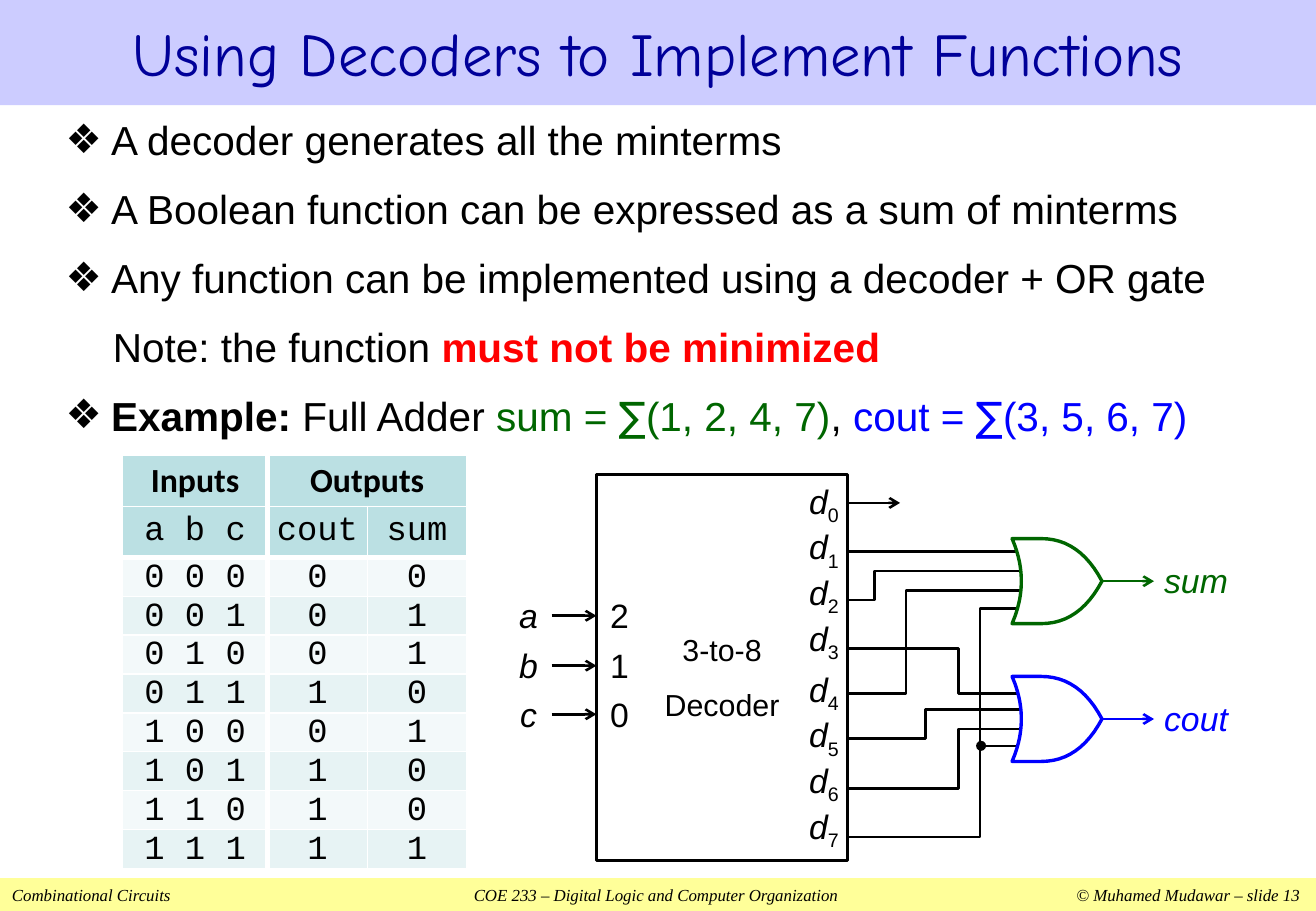
"""Build the slide on implementing functions with decoders."""
from itertools import product

from lxml import etree
from pptx import Presentation
from pptx.dml.color import RGBColor
from pptx.enum.shapes import MSO_CONNECTOR, MSO_SHAPE
from pptx.enum.text import MSO_ANCHOR, MSO_AUTO_SIZE, PP_ALIGN
from pptx.oxml.ns import qn
from pptx.util import Pt

STRAIGHT = MSO_CONNECTOR.STRAIGHT
RECTANGLE = MSO_SHAPE.RECTANGLE
MIDDLE = MSO_ANCHOR.MIDDLE
NO_FIT = MSO_AUTO_SIZE.NONE
CENTER, LEFT = PP_ALIGN.CENTER, PP_ALIGN.LEFT

HEX = {
    "black": "000000", "white": "FFFFFF", "red": "FF0000",
    "green": "006600", "blue": "0000FF", "navy": "000099",
    "lavender": "CCCCFF", "yellow": "FFFF99",
    "header": "BBE0E3", "pale": "F3F9FA", "tint": "E7F3F4",
}
COLOR = {name: RGBColor.from_string(value) for name, value in HEX.items()}


def style(run, size, color="black", font="Arial", bold=False, italic=False):
    run.font.size = Pt(size)
    run.font.name = font
    run.font.bold = bold
    run.font.italic = italic
    run.font.color.rgb = COLOR[color]


def add_label(text, left, top, width=27.4, color="black", italic=True, align=CENTER, subscript=""):
    label = slide.shapes.add_textbox(Pt(left), Pt(top), Pt(width), Pt(28))
    frame = label.text_frame
    frame.margin_left = frame.margin_right = frame.margin_top = frame.margin_bottom = 0
    frame.word_wrap = False
    frame.vertical_anchor = MIDDLE
    frame.text = text
    paragraph = frame.paragraphs[0]
    paragraph.alignment = align
    style(paragraph.runs[0], 20, color, italic=italic)
    if subscript:
        index = paragraph.add_run()
        index.text = subscript
        style(index, 20, color)
        index.font._element.set("baseline", "-25000")


prs = Presentation()
prs.slide_width, prs.slide_height = Pt(780), Pt(540)
slide = prs.slides.add_slide(prs.slide_layouts[1])

footer = slide.shapes.add_shape(RECTANGLE, 0, Pt(520.5), Pt(780), Pt(19.5))
footer.shadow.inherit = False
footer.fill.solid()
footer.fill.fore_color.rgb = COLOR["yellow"]
footer.line.fill.background()
footer.text_frame.vertical_anchor = MIDDLE
footer.text_frame.text = (
    "Combinational Circuits\tCOE 233 – Digital Logic and Computer Organization"
    "\t© Muhamed Mudawar – slide 13"
)
credits = footer.text_frame.paragraphs[0]
credits.alignment = LEFT
style(credits.runs[0], 10, font="Times New Roman", italic=True)
tabs = etree.SubElement(credits._p.get_or_add_pPr(), qn("a:tabLst"))
for position, kind in ((381.6, "ctr"), (763.2, "r")):
    etree.SubElement(tabs, qn("a:tab"), pos=str(Pt(position)), algn=kind)

title = slide.shapes.title
title.left, title.top, title.width, title.height = 0, 0, Pt(780), Pt(62.4)
title.fill.solid()
title.fill.fore_color.rgb = COLOR["lavender"]
title.text_frame.auto_size = NO_FIT
title.text_frame.vertical_anchor = MIDDLE
title.text_frame.text = "Using Decoders to Implement Functions"
title.text_frame.paragraphs[0].alignment = CENTER
style(title.text_frame.paragraphs[0].runs[0], 36, "navy", "Comic Neue")

points = [
    [("A decoder generates all the minterms",)],
    [("A Boolean function can be expressed as a sum of minterms",)],
    [("Any function can be implemented using a decoder + OR gate",)],
    [("Note: the function ",), ("must not be minimized", "red", "Arial", True)],
    [("Example:", "black", "Arial", True), (" Full Adder ",),
     ("sum = ", "green"), ("∑", "green", "DejaVu Sans"), ("(1, 2, 4, 7)", "green"), (", ",),
     ("cout = ", "blue"), ("∑", "blue", "DejaVu Sans"), ("(3, 5, 6, 7)", "blue")],
]
body = slide.placeholders[1]
body.left, body.top, body.width, body.height = Pt(31.7), Pt(64.8), Pt(730), Pt(203.8)
body.text_frame.auto_size = NO_FIT
for number, pieces in enumerate(points):
    point = body.text_frame.paragraphs[0] if number == 0 else body.text_frame.add_paragraph()
    point.space_before = Pt(12)
    for text, *look in pieces:
        run = point.add_run()
        run.text = text
        style(run, 24, *look)
    is_note = pieces[0][0].startswith("Note")
    properties = point._p.get_or_add_pPr()
    properties.set("marL", str(Pt(28 if is_note else 27)))
    properties.set("indent", str(Pt(0 if is_note else -27)))
    if is_note:
        etree.SubElement(properties, qn("a:buNone"))
    else:
        etree.SubElement(properties, qn("a:buChar"), char="❖")

rows = [["Inputs", "Outputs", ""], ["a b c", "cout", "sum"]]
for bits in product((0, 1), repeat=3):
    carry, total = divmod(sum(bits), 2)
    rows.append([" ".join(map(str, bits)), str(carry), str(total)])
truth_table = slide.shapes.add_table(10, 3, Pt(72.7), Pt(270), Pt(204), Pt(244.8)).table
for column, width in zip(truth_table.columns, (86, 59, 59)):
    column.width = Pt(width)
truth_table.cell(0, 1).merge(truth_table.cell(0, 2))
for r, texts in enumerate(rows):
    truth_table.rows[r].height = Pt(30.2 if r < 2 else 23.05)
    for c, text in enumerate(texts):
        cell = truth_table.cell(r, c)
        cell.margin_left = cell.margin_right = cell.margin_top = cell.margin_bottom = 0
        cell.vertical_anchor = MIDDLE
        for side, thick in (("L", c == 1), ("R", c == 0), ("T", r == 2), ("B", r == 1)):
            border = etree.SubElement(cell._tc.get_or_add_tcPr(), qn(f"a:ln{side}"),
                                      w=str(Pt(3 if thick else 1)))
            paint = etree.SubElement(border, qn("a:solidFill"))
            etree.SubElement(paint, qn("a:srgbClr"), val=HEX["white"])
        cell.fill.solid()
        cell.fill.fore_color.rgb = COLOR["header" if r < 2 else ("pale", "tint")[r % 2]]
        if text:
            cell.text_frame.text = text
            value = cell.text_frame.paragraphs[0]
            value.alignment = CENTER
            value.line_spacing = 1.0 if r < 2 else 0.9
            style(value.runs[0], 20, font="Courier New" if r else "Calibri", bold=r == 0)

wires = [(467.3, 568.1, 432), (437.8, 548.6, 420.5), (384.5, 568.1, 411.1),
         (496.1, 581, 360.7), (411.1, 537.1, 349.9), (355.7, 518.4, 338.4)]
for start, bend, end in wires:
    builder = slide.shapes.build_freeform(Pt(502), Pt(start))
    builder.add_line_segments(
        [(Pt(x), Pt(y)) for x, y in ((bend, start), (bend, end), (606, end))], close=False)
    wire = builder.convert_to_shape()
    wire.shadow.inherit = False
    wire.fill.background()
    wire.line.color.rgb = COLOR["black"]
    wire.line.width = Pt(1.5)

decoder = slide.shapes.add_shape(RECTANGLE, Pt(353.5), Pt(281.2), Pt(149), Pt(229))
decoder.shadow.inherit = False
decoder.fill.solid()
decoder.fill.fore_color.rgb = COLOR["white"]
decoder.line.color.rgb = COLOR["black"]
decoder.line.width = Pt(2)
decoder.text_frame.vertical_anchor = MIDDLE
decoder.text_frame.text = "3-to-8\nDecoder"
for caption in decoder.text_frame.paragraphs:
    caption.alignment = CENTER
    caption.line_spacing = 1.5
    style(caption.runs[0], 18)

input_levels = (365, 394.6, 423.4)
outputs = (("sum", 344.5, "green"), ("cout", 426.2, "blue"))
lines = [(326.9, 353.5, level, "black", "tailEnd", "arrow") for level in input_levels]
lines += [(653.2, 684, level, color, "tailEnd", "arrow") for _, level, color in outputs]
lines += [(502.5, 533.5, 298.1, "black", "tailEnd", "arrow"),
          (502.5, 606, 326.9, "black", None, None),
          (581.5, 606, 442.1, "black", "headEnd", "oval")]
for start, end, level, color, tip, kind in lines:
    line = slide.shapes.add_connector(STRAIGHT, Pt(start), Pt(level), Pt(end), Pt(level))
    line.line.color.rgb = COLOR[color]
    line.line.width = Pt(1.5)
    if tip:
        etree.SubElement(line.line._get_or_add_ln(), qn(f"a:{tip}"), type=kind)
    etree.SubElement(line._element.spPr, qn("a:effectLst"))

for name, weight, level in zip("abc", "210", input_levels):
    add_label(name, 299.5, level - 14.3)
    add_label(weight, 353.5, level - 14.3, italic=False)
for index in range(8):
    add_label("d", 474.6, 284.4 + 27.1 * index + (3 if index > 3 else 0), subscript=str(index))

steps = [step / 12 for step in range(13)]
front = [(17.3 * (1 - t) ** 2 + 80 * t * (1 - t) + 53.3 * t * t, 25.2 * (1 - t * t))
         for t in steps]
back = [(5.5 * (1 - t * t), 25.2 * t) for t in steps]
half = [(0, 25.2)] + front
outline = [(x, -y) for x, y in half] + half[::-1] + back[::-1] + [(x, -y) for x, y in back]
for name, level, color in outputs:
    corners = [(Pt(599.9 + x), Pt(level + y)) for x, y in outline]
    builder = slide.shapes.build_freeform(*corners[0])
    builder.add_line_segments(corners[1:], close=True)
    gate = builder.convert_to_shape()
    gate.shadow.inherit = False
    gate.fill.solid()
    gate.fill.fore_color.rgb = COLOR["white"]
    gate.line.color.rgb = COLOR[color]
    gate.line.width = Pt(2)
    add_label(name, 690, level - 14.5, 45.4, color, align=LEFT)

prs.save("out.pptx")
